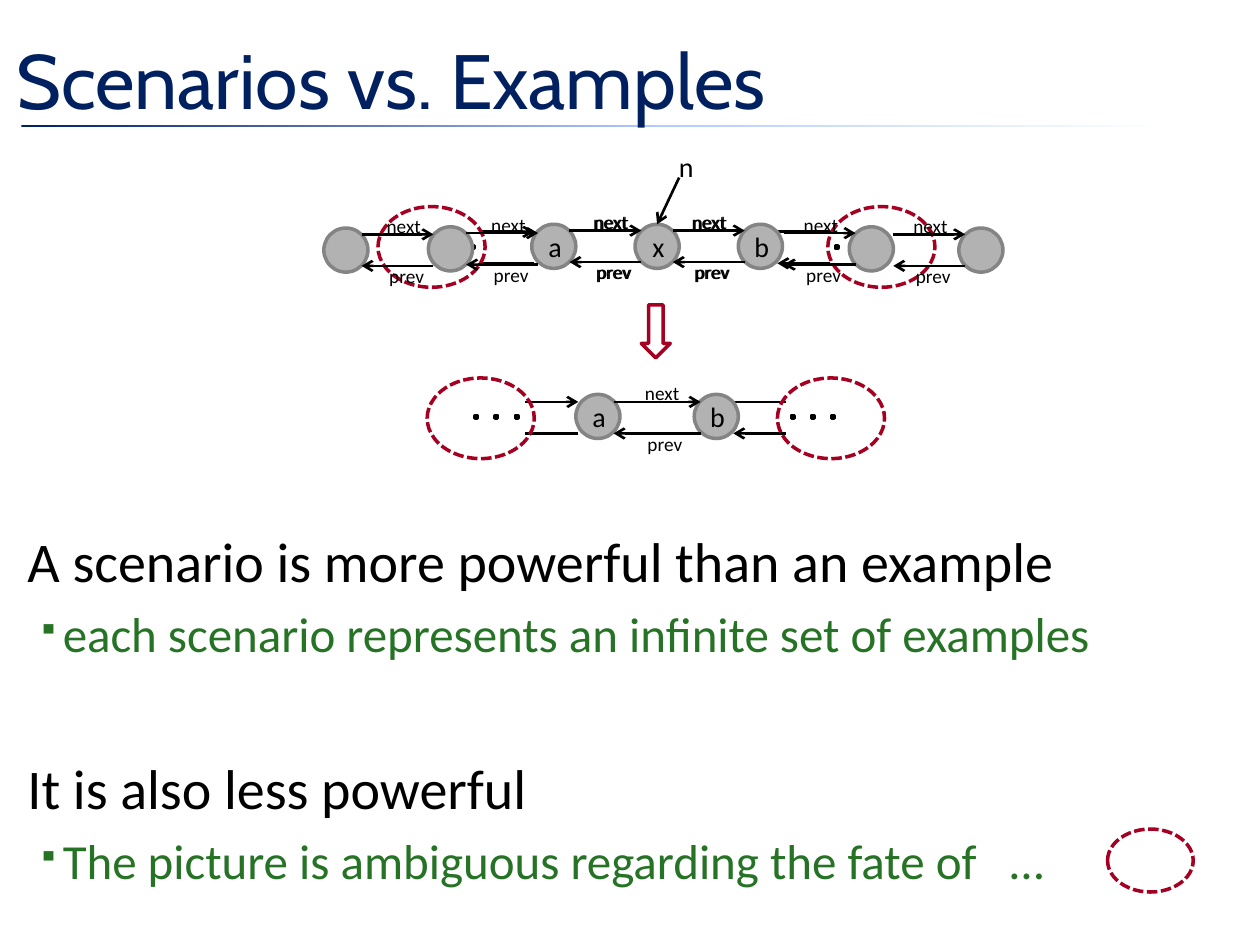
from lxml.etree import SubElement
from pptx import Presentation
from pptx.dml.color import RGBColor
from pptx.enum.dml import MSO_LINE_DASH_STYLE as DASH
from pptx.enum.shapes import MSO_CONNECTOR, MSO_SHAPE as SHAPE
from pptx.enum.text import MSO_ANCHOR as ANCHOR, PP_ALIGN as ALIGN
from pptx.oxml.ns import qn
from pptx.util import Inches, Pt

BLACK, WHITE, NAVY, RED, GREEN = "000000", "FFFFFF", "002060", "A50021", "267326"
GREY, RIM = "B2B2B2", "848484"
TITLE = "Scenarios vs. Examples"
# text, level, space before
BODY = [
    (["A scenario is more powerful than an example"], 0, 2),
    (["each scenario represents an infinite set of examples"], 1, 5.6),
    (["It is also less powerful"], 0, 52),
    (["The picture is ambiguous regarding the fate of", " ", "…"], 1, 5.6),
]
LEVELS = [(32, BLACK, 0.12, 0), (28, GREEN, 0.4, -0.2)]  # size, colour, margin, indent
NODE, DOT, DOT_STEP = 0.35, 0.02, 0.16
LINK_GAP = 0.25  # from a next arrow down to its prev arrow

# dashed regions: left, top, width, height
REGIONS = [(x, y, 0.85, 0.64) for x, y in
           [(3, 1.64), (6.57, 1.64), (3.39, 3), (6.17, 3)]] + [(8.79, 6.58, 0.68, 0.5)]
DOTS = [(3.74, 1.95, 1), (6.63, 1.95, 1), (3.77, 3.3, 3), (6.28, 3.3, 3)]  # left, top, count
NODES = [  # label, left, top
    ("", 2.57, 1.81), ("", 3.4, 1.8), ("a", 4.22, 1.78), ("x", 5.04, 1.78),
    ("b", 5.86, 1.78), ("", 6.74, 1.8), ("", 7.61, 1.81),
    ("a", 4.57, 3.13), ("b", 5.51, 3.13),
]
# left, right, top, label offset, times the labels are overprinted
LINKS = [
    (2.87, 3.44, 1.86, 0.1, 1), (3.7, 4.27, 1.85, 0.1, 1), (4.52, 5.09, 1.83, 0.1, 2),
    (5.34, 5.91, 1.83, 0.06, 2), (6.22, 6.79, 1.85, 0.06, 1), (7.09, 7.66, 1.86, 0.06, 1),
    (4.87, 5.56, 3.19, 0.15, 1),
]
# links cut off at a region: left, top, head on the next arrow
STUBS = [(3.82, 1.84, True), (6.17, 1.84, False), (4.17, 3.19, True), (5.82, 3.19, False)]
STUB = 0.42

prs = Presentation()
prs.slide_width, prs.slide_height = Inches(10), Inches(7.5)
s = prs.slides.add_slide(prs.slide_layouts[6])


def rgb(color):
    return RGBColor.from_string(color)


def style(r, size, color, font="Calibri"):
    r.font.size, r.font.name = Pt(size), font
    r.font.color.rgb = rgb(color)


def shape(kind, x, y, w, h, fill=None, line=None, dashed=False):
    sp = s.shapes.add_shape(kind, *map(Inches, (x, y, w, h)))
    sp.shadow.inherit = False
    if fill:
        sp.fill.solid()
        sp.fill.fore_color.rgb = rgb(fill)
    else:
        sp.fill.background()
    if line:
        sp.line.color.rgb, sp.line.width = rgb(line), Pt(2)
    else:
        sp.line.fill.background()
    if dashed:
        sp.line.dash_style = DASH.SQUARE_DOT
    return sp


def text(x, y, w, h, value, size, color=BLACK, font="Calibri", wrap=False):
    tf = s.shapes.add_textbox(*map(Inches, (x, y, w, h))).text_frame
    tf.word_wrap = wrap
    tf.text = value
    style(tf.paragraphs[0].runs[0], size, color, font)
    return tf


def arrow(x1, y1, x2, y2, head=True):
    c = s.shapes.add_connector(MSO_CONNECTOR.STRAIGHT, *map(Inches, (x1, y1, x2, y2)))
    c.line.color.rgb, c.line.width = rgb(BLACK), Pt(1.5)
    if head:
        SubElement(c.line._get_or_add_ln(), qn("a:tailEnd"), type="arrow")
    SubElement(c._element.spPr, qn("a:effectLst"))
    return c


def node(label, x, y):
    sp = shape(SHAPE.OVAL, x, y, NODE, NODE, GREY, RIM)
    if label:
        tf = sp.text_frame
        tf.margin_left, tf.margin_right = Inches(0.02), 0
        tf.vertical_anchor = ANCHOR.MIDDLE
        tf.text = label
        tf.paragraphs[0].alignment = ALIGN.CENTER
        style(tf.paragraphs[0].runs[0], 16, BLACK)
    return sp


# Title and the fading rule under it
rule = shape(SHAPE.RECTANGLE, 0.17, 0.99, 9.83, 0.02, WHITE)
rule.fill.gradient()
rule.fill.gradient_angle = 0
for stop, (pos, color) in zip(rule.fill.gradient_stops, [(0, NAVY), (0.93, WHITE)]):
    stop.position, stop.color.rgb = pos, rgb(color)
stops = rule._element.spPr.find(qn("a:gradFill")).find(qn("a:gsLst"))
middle = SubElement(stops, qn("a:gs"), pos="52000")
SubElement(middle, qn("a:srgbClr"), val="B4CDFF")
stops.insert(1, middle)
title = text(0.03, 0, 9.5, 1.25, TITLE, 44, NAVY, "Cabin", wrap=True)
title.vertical_anchor = ANCHOR.MIDDLE

# Body text
tf = s.shapes.add_textbox(0, Inches(4.13), Inches(9.83), Inches(3.2)).text_frame
tf.word_wrap = True
for i, (parts, level, before) in enumerate(BODY):
    p = tf.paragraphs[0] if i == 0 else tf.add_paragraph()
    p.level, p.space_before = level, Pt(before)
    size, color, margin, indent = LEVELS[level]
    pPr = p._p.get_or_add_pPr()
    pPr.set("marL", str(Inches(margin)))
    pPr.set("indent", str(Inches(indent)))
    if level:
        SubElement(pPr, qn("a:buSzPct"), val="60000")
        SubElement(pPr, qn("a:buChar"), char="▪")
    for part in parts:
        r = p.add_run()
        r.text = part
        style(r, size, color)
        if part == " ":  # widened gap before the ellipsis
            r._r.get_or_add_rPr().set("spc", "1270")

# Cut-off links, dots and regions
for x, y, forward in STUBS:
    arrow(x, y, x + STUB, y, forward)
    arrow(x + STUB, y + LINK_GAP, x, y + LINK_GAP, not forward)
for x, y, count in DOTS:
    for i in range(count):
        shape(SHAPE.RECTANGLE, x + i * DOT_STEP, y, DOT, DOT, BLACK, BLACK)
for box in REGIONS:
    shape(SHAPE.OVAL, *box, line=RED, dashed=True)

# Nodes and the links between them
nodes = [node(*n) for n in NODES]
for left, right, y, offset, times in LINKS:
    arrow(left, y, right, y)
    arrow(right, y + LINK_GAP, left, y + LINK_GAP)
    for i in range(times):
        x = left + offset - i * 0.01
        text(x, y - 0.21, 0.51, 0.29, "next", 11)
        text(x + 0.02, y + 0.19, 0.52, 0.29, "prev", 11)

# Pointer n to node x, and the step down to the second list
arrow(5.39, 1.41, 5.22, 1.78).end_connect(nodes[3], 0)
text(5.29, 1.14, 0.34, 0.37, "n", 16)
shape(SHAPE.DOWN_ARROW, 5.09, 2.42, 0.23, 0.42, WHITE, RED)

prs.save("out.pptx")
